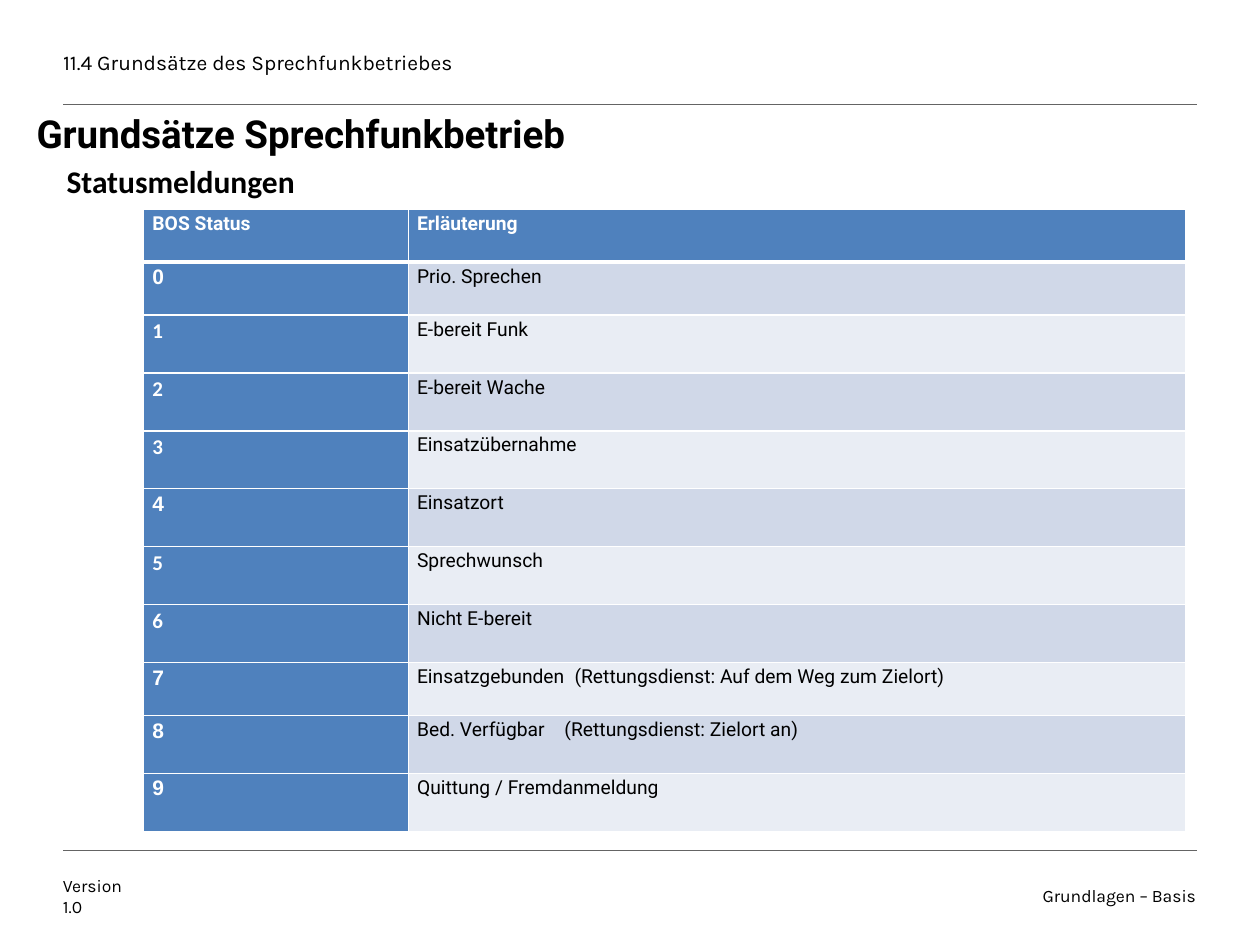
import pptx
import pptx.dml.color
import pptx.enum.shapes
import pptx.enum.text
import pptx.oxml
import pptx.oxml.ns
import pptx.util

Inches = pptx.util.Inches
Pt = pptx.util.Pt
ALIGN = pptx.enum.text.PP_ALIGN
ANCHOR = pptx.enum.text.MSO_ANCHOR

COLORS = {"text": "000000", "rule": "646464", "white": "FFFFFF",
          "blue": "4F81BD", "band_dark": "D0D8E8", "band_light": "E9EDF4"}

LABELS = [
    {"lines": ["11.4 Grundsätze des Sprechfunkbetriebes"], "at": (0.5, 0.33, 6.08, 0.33),
     "font": "Karla", "size": 12, "anchor": ANCHOR.MIDDLE},
    {"lines": ["Version", "1.0"], "at": (0.5, 6.89, 0.56, 0.44),
     "font": "Karla", "size": 10, "anchor": ANCHOR.MIDDLE},
    {"lines": ["Grundlagen – Basis"], "at": (8.07, 6.89, 1.42, 0.44),
     "font": "Karla", "size": 10, "anchor": ANCHOR.MIDDLE, "align": ALIGN.RIGHT},
    {"lines": ["Grundsätze Sprechfunkbetrieb"], "at": (0.29, 0.91, 7.38, 0.67),
     "font": "Roboto", "size": 22, "bold": True, "spacing": Pt(24)},
    {"lines": ["Statusmeldungen"], "at": (0.43, 1.24, 3.54, 0.4),
     "font": "Calibri", "size": 18, "bold": True, "insets": (0.1, 0.05)},
]
RULE_TOPS = [0.83, 6.75]

HEADINGS = ["BOS Status", "Erläuterung"]
STATUSES = [
    "Prio. Sprechen",
    "E-bereit Funk",
    "E-bereit Wache",
    "Einsatzübernahme",
    "Einsatzort",
    "Sprechwunsch",
    "Nicht E-bereit",
    "Einsatzgebunden\t(Rettungsdienst: Auf dem Weg zum Zielort)",
    "Bed. Verfügbar\t(Rettungsdienst: Zielort an)",
    "Quittung / Fremdanmeldung",
]
TAB_STOPS = {7: 1.25, 8: 1.17}
ARIAL_NUMBERS = {0, 4, 7, 8, 9}
SHORT_ROWS = {0, 1, 8}
COLUMN_WIDTHS = [2.1, 6.17]
TABLE_LEFT, TABLE_TOP = 1.14, 1.66


def color(name):
    return pptx.dml.color.RGBColor.from_string(COLORS[name])


def add_span(para, text, font, size, tint="text", bold=False):
    span = para.add_run()
    span.text = text
    span.font.name = font
    span.font.size = Pt(size)
    span.font.bold = bold
    span.font.color.rgb = color(tint)


def add_label(slide, label):
    box = slide.shapes.add_textbox(*map(Inches, label["at"]))
    frame = box.text_frame
    frame.word_wrap = True
    frame.vertical_anchor = label.get("anchor", ANCHOR.TOP)
    side, end = label.get("insets", (0, 0))
    frame.margin_left = frame.margin_right = Inches(side)
    frame.margin_top = frame.margin_bottom = Inches(end)
    for index, line in enumerate(label["lines"]):
        para = frame.add_paragraph() if index else frame.paragraphs[0]
        para.alignment = label.get("align", ALIGN.LEFT)
        if "spacing" in label:
            para.line_spacing = label["spacing"]
        add_span(para, line, label["font"], label["size"], bold=label.get("bold", False))


def add_rule(slide, top):
    rule = slide.shapes.add_connector(pptx.enum.shapes.MSO_CONNECTOR.STRAIGHT,
                                      Inches(0.5), Inches(top), Inches(9.5), Inches(top))
    rule.line.color.rgb = color("rule")
    rule.line.width = Pt(0.25)
    rule._element.spPr.append(pptx.oxml.parse_xml(
        f'<a:effectLst {pptx.oxml.ns.nsdecls("a")}/>'))


def add_borders(cell, row):
    widths = {"lnL": 1, "lnR": 1, "lnT": 3 if row == 1 else 1, "lnB": 3 if row == 0 else 1}
    for tag, width in widths.items():
        cell._tc.get_or_add_tcPr().append(pptx.oxml.parse_xml(
            f'<a:{tag} {pptx.oxml.ns.nsdecls("a")} w="{Pt(width)}"><a:solidFill>'
            f'<a:srgbClr val="{COLORS["white"]}"/></a:solidFill></a:{tag}>'))


def add_tab_stop(para, inches):
    para._p.get_or_add_pPr().append(pptx.oxml.parse_xml(
        f'<a:tabLst {pptx.oxml.ns.nsdecls("a")}>'
        f'<a:tab pos="{Inches(inches)}" algn="l"/></a:tabLst>'))


def fill_cell(cell, row, fill, text, font, size, tint, bold, tab_stop=None):
    cell.margin_left = cell.margin_right = Inches(0.07)
    cell.margin_top = cell.margin_bottom = 0
    add_borders(cell, row)
    cell.fill.solid()
    cell.fill.fore_color.rgb = color(fill)
    para = cell.text_frame.paragraphs[0]
    para.line_spacing = 1.15
    if tab_stop:
        add_tab_stop(para, tab_stop)
    add_span(para, text, font, size, tint, bold)


def add_status_table(slide):
    heights = [0.42 if row in SHORT_ROWS else 0.46 for row in range(len(STATUSES) + 1)]
    table = slide.shapes.add_table(
        len(heights), len(COLUMN_WIDTHS), Inches(TABLE_LEFT), Inches(TABLE_TOP),
        Inches(sum(COLUMN_WIDTHS)), Inches(sum(heights))).table
    for column, width in zip(table.columns, COLUMN_WIDTHS):
        column.width = Inches(width)
    for row, height in zip(table.rows, heights):
        row.height = Inches(height)
    for column, heading in enumerate(HEADINGS):
        fill_cell(table.cell(0, column), 0, "blue", heading, "Roboto", 11, "white", True)
    for number, meaning in enumerate(STATUSES):
        row = number + 1
        number_font = "Arial" if number in ARIAL_NUMBERS else "Calibri"
        band = "band_light" if number % 2 else "band_dark"
        fill_cell(table.cell(row, 0), row, "blue", str(number), number_font, 12, "white", True)
        fill_cell(table.cell(row, 1), row, band, meaning, "Roboto", 11, "text", False,
                  TAB_STOPS.get(number))


def main():
    deck = pptx.Presentation()
    deck.slide_width, deck.slide_height = Inches(10), Inches(7.5)
    slide = deck.slides.add_slide(deck.slide_layouts[6])
    for top in RULE_TOPS:
        add_rule(slide, top)
    for label in LABELS:
        add_label(slide, label)
    add_status_table(slide)
    deck.save("out.pptx")


if __name__ == "__main__":
    main()
